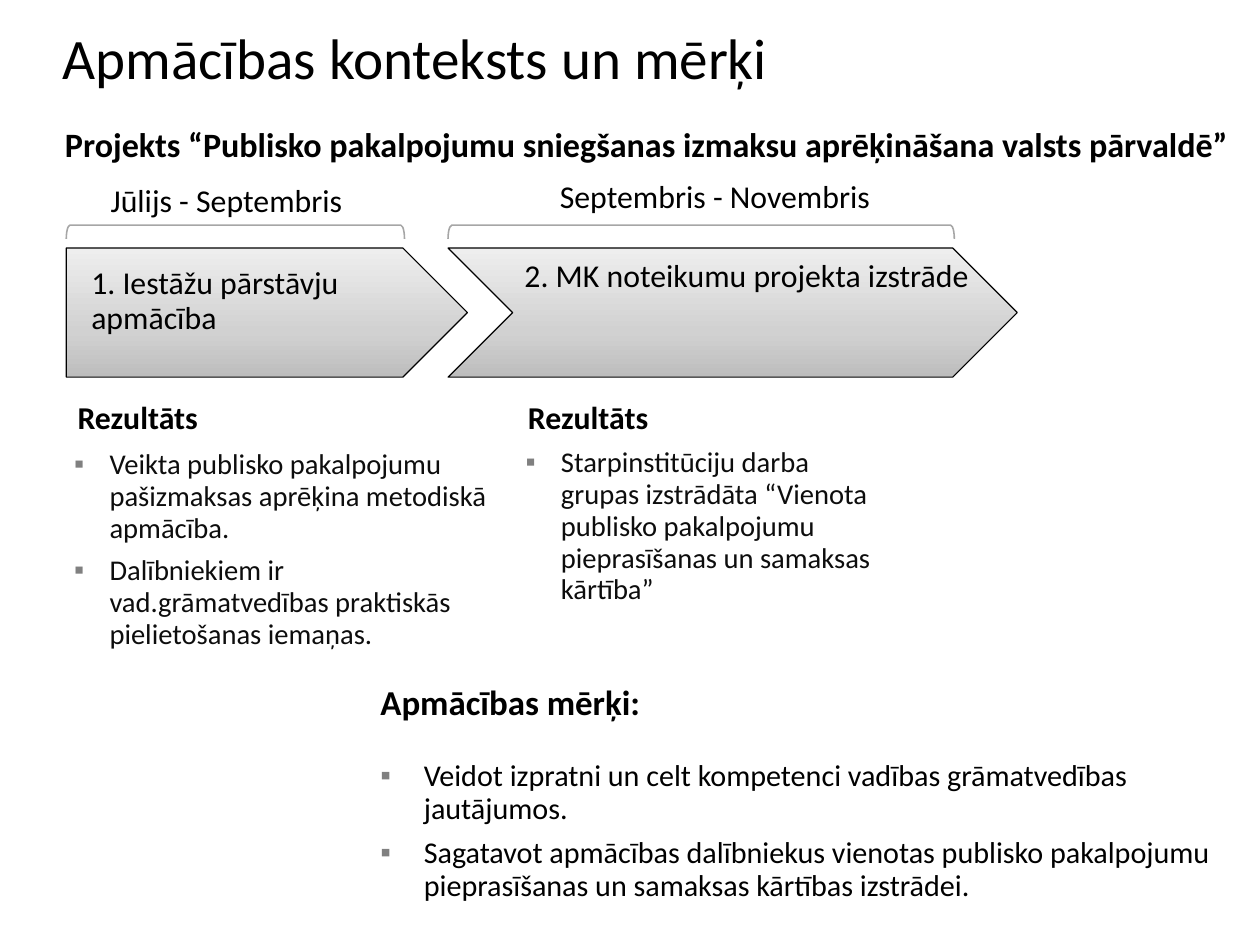
from dataclasses import dataclass

import pptx
import pptx.dml.color
import pptx.enum.shapes
import pptx.enum.text
import pptx.oxml.ns
import pptx.util
from lxml import etree

Inches = pptx.util.Inches
Pt = pptx.util.Pt
Preset = pptx.enum.shapes.MSO_SHAPE
Anchor = pptx.enum.text.MSO_ANCHOR
qn = pptx.oxml.ns.qn

CM_PER_INCH = 2.54
PAGE_WIDTH = 28 / CM_PER_INCH
PAGE_HEIGHT = 21 / CM_PER_INCH
FONT = "Calibri"
BULLET_FONT = "Arial"
BLACK = "000000"
NEAR_BLACK = "0D0D0D"
BULLET_GRAY = "808080"
BRACKET_GRAY = "A6A6A6"
ARROW_STOPS = [(0, "BDBDBD"), (35, "D1D1D1"), (100, "EEEEEE")]
ARROW_TOP, ARROW_HEIGHT = 2.17, 1.13
BRACKET_TOP, BRACKET_DEPTH = 1.97, 0.12


@dataclass
class Line:
    text: str
    size: float = 20
    bold: bool = False
    color: str = BLACK
    indent: float = 0
    after: float = 0
    spacing: float = 0.93


@dataclass
class TextBox:
    left: float
    top: float
    width: float
    height: float
    lines: list[Line]


@dataclass
class Stage:
    preset: Preset
    left: float
    width: float
    bracket_width: float


def result(text: str) -> Line:
    return Line(text, 18, color=NEAR_BLACK, indent=0.31, after=6.6)


def goal(text: str) -> Line:
    return Line(text, 19, indent=0.38, after=6)


TITLE = TextBox(0.55, -0.2, 9.92, 1.38,
                [Line("Apmācības konteksts un mērķi", 36, spacing=1.01)])

STAGES = [
    Stage(Preset.CHEVRON, 3.92, 4.98, 4.43),
    Stage(Preset.PENTAGON, 0.58, 3.51, 2.96),
]

TEXT_BOXES = [
    TextBox(0.47, 1.06, 10.79, 0.44, [Line(
        "Projekts “Publisko pakalpojumu sniegšanas izmaksu aprēķināšana valsts pārvaldē”",
        21.5, True)]),
    TextBox(0.87, 1.56, 2.64, 0.42, [Line("Jūlijs - Septembris")]),
    TextBox(4.8, 1.53, 3.07, 0.42, [Line("Septembris - Novembris")]),
    TextBox(0.7, 2.28, 4.02, 0.73, [Line("1. Iestāžu pārstāvju \vapmācība")]),
    TextBox(4.49, 2.22, 4.09, 0.73, [Line("2. MK noteikumu projekta izstrāde")]),
    TextBox(0.58, 3.46, 2.49, 0.42, [Line("Rezultāts", bold=True)]),
    TextBox(4.52, 3.46, 2.49, 0.42, [Line("Rezultāts", bold=True)]),
    TextBox(0.55, 3.88, 3.89, 2.71, [
        result("Veikta publisko pakalpojumu pašizmaksas aprēķina metodiskā apmācība."),
        result("Dalībniekiem ir vad.grāmatvedības praktiskās pielietošanas iemaņas."),
    ]),
    TextBox(4.5, 3.86, 3.37, 1.51, [result(
        "Starpinstitūciju darba grupas izstrādāta “Vienota publisko pakalpojumu "
        "pieprasīšanas un samaksas kārtība”")]),
    TextBox(3.23, 5.94, 7.95, 2.46, [
        Line("Apmācības mērķi:", 22, True, after=22.5),
        goal("Veidot izpratni un celt kompetenci vadības grāmatvedības jautājumos."),
        goal("Sagatavot apmācības dalībniekus vienotas publisko pakalpojumu "
             "pieprasīšanas un samaksas kārtības izstrādei."),
    ]),
]


def rgb(color: str) -> pptx.dml.color.RGBColor:
    return pptx.dml.color.RGBColor.from_string(color)


def add_bullet(para, indent: float) -> None:
    properties = para._p.get_or_add_pPr()
    properties.set("marL", str(Inches(indent)))
    properties.set("indent", str(-Inches(indent)))
    bullet_color = etree.SubElement(properties, qn("a:buClr"))
    etree.SubElement(bullet_color, qn("a:srgbClr"), val=BULLET_GRAY)
    etree.SubElement(properties, qn("a:buFont"), typeface=BULLET_FONT)
    etree.SubElement(properties, qn("a:buChar"), char="▪")


def add_text(page, item: TextBox):
    box = page.shapes.add_textbox(Inches(item.left), Inches(item.top),
                                  Inches(item.width), Inches(item.height))
    frame = box.text_frame
    frame.word_wrap = True
    frame.text = "\n".join(line.text for line in item.lines)
    for para, line in zip(frame.paragraphs, item.lines):
        if line.indent:
            add_bullet(para, line.indent)
        para.line_spacing = line.spacing
        para.space_after = Pt(line.after)
        for span in para.runs:
            span.font.name = FONT
            span.font.size = Pt(line.size)
            span.font.bold = line.bold
            span.font.color.rgb = rgb(line.color)
    return frame


def fill_gradient(shape) -> None:
    """Shade the shape from dark at the bottom to light at the top."""
    shape.fill.gradient()
    shape.fill.gradient_angle = 90
    stops = shape._element.spPr.find(".//" + qn("a:gsLst"))
    for old_stop in list(stops):
        stops.remove(old_stop)
    for percent, color in ARROW_STOPS:
        stop = etree.SubElement(stops, qn("a:gs"), pos=str(percent * 1000))
        etree.SubElement(stop, qn("a:srgbClr"), val=color)


def add_outlined(page, preset: Preset, left: float, top: float, width: float,
                 height: float, color: str, weight: float):
    shape = page.shapes.add_shape(preset, Inches(left), Inches(top),
                                  Inches(width), Inches(height))
    shape.shadow.inherit = False
    shape.line.color.rgb = rgb(color)
    shape.line.width = Pt(weight)
    return shape


def add_stage(page, stage: Stage) -> None:
    arrow = add_outlined(page, stage.preset, stage.left, ARROW_TOP,
                         stage.width, ARROW_HEIGHT, BLACK, 0.75)
    fill_gradient(arrow)

    # The bracket stands upright before it is turned around its centre.
    shift = (stage.bracket_width - BRACKET_DEPTH) / 2
    bracket = add_outlined(page, Preset.RIGHT_BRACKET, stage.left + shift,
                           BRACKET_TOP - shift, BRACKET_DEPTH,
                           stage.bracket_width, BRACKET_GRAY, 1)
    bracket.rotation = 270
    bracket.adjustments[0] = 0.27
    bracket.fill.background()


def main() -> None:
    deck = pptx.Presentation()
    deck.slide_width = Inches(PAGE_WIDTH)
    deck.slide_height = Inches(PAGE_HEIGHT)
    page = deck.slides.add_slide(deck.slide_layouts[6])
    page.background.fill.solid()
    page.background.fill.fore_color.rgb = rgb("FFFFFF")

    title = add_text(page, TITLE)
    title.vertical_anchor = Anchor.MIDDLE
    title.margin_left = title.margin_right = 0
    title.margin_top = title.margin_bottom = 0

    for stage in STAGES:
        add_stage(page, stage)
    for item in TEXT_BOXES:
        add_text(page, item)
    deck.save("out.pptx")


if __name__ == "__main__":
    main()
